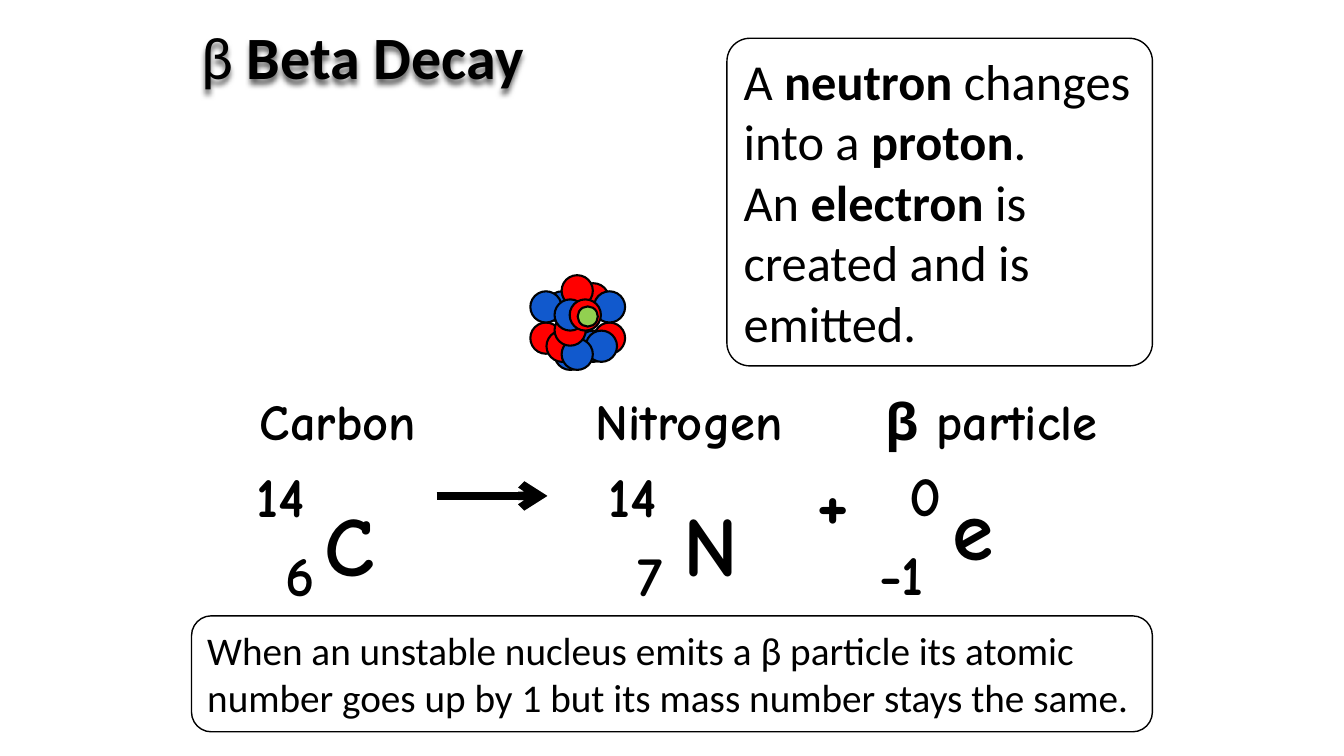
from lxml.etree import SubElement
from pptx import Presentation
from pptx.dml.color import RGBColor
from pptx.enum.shapes import MSO_CONNECTOR, MSO_SHAPE
from pptx.enum.text import MSO_ANCHOR, MSO_AUTO_SIZE, PP_ALIGN
from pptx.oxml.ns import qn
from pptx.util import Pt

PX = 9144  # EMU per px, 100 px to the inch
BLACK = RGBColor(0x00, 0x00, 0x00)
WHITE = RGBColor(0xFF, 0xFF, 0xFF)
PROTON_RED = RGBColor(0xFF, 0x00, 0x00)
NEUTRON_BLUE = RGBColor(0x11, 0x59, 0xCD)
ELECTRON_GREEN = RGBColor(0x92, 0xD0, 0x50)

# Content: paragraphs are lists of (text, bold) runs
TITLE = [[("β ", False), ("Beta Decay", True)]]
EXPLANATION = [
    [("A ", False), ("neutron", True), (" changes into a ", False),
     ("proton", True), (".", False)],
    [("An ", False), ("electron", True),
     (" is created and is emitted.", False)],
]
SUMMARY = [[("When an unstable nucleus emits a β particle its atomic number "
             "goes up by 1 but its mass number stays the same.", False)]]

# Equation labels: text, size in points, left, top, width
EQUATION = [
    ("C", 60, 312, 484, 72), ("14", 40, 245, 453, 89),
    ("6", 40, 273, 531, 54), ("Carbon", 36, 248, 382, 187),
    ("N", 60, 668, 484, 89), ("14", 40, 594, 453, 89),
    ("7", 40, 622, 531, 54), ("Nitrogen", 36, 581, 382, 231),
    ("e", 60, 935, 468, 67), ("0", 40, 892, 452, 54),
    ("-1", 40, 862, 530, 89), ("β particle", 36, 868, 382, 255),
    ("+", 54, 800, 445, 66),
]
LABEL_HEIGHTS = {36: 71, 40: 77, 54: 101, 60: 111}

# Nucleons from back to front: column and row on a fine grid, colour
NUCLEONS = [
    (6, 1, PROTON_RED), (0, 6, PROTON_RED), (3, 8, NEUTRON_BLUE),
    (2, 2, NEUTRON_BLUE), (2, 7, PROTON_RED), (6, 7, NEUTRON_BLUE),
    (8, 6, PROTON_RED), (0, 2, NEUTRON_BLUE), (7, 7, NEUTRON_BLUE),
    (4, 8, NEUTRON_BLUE), (4, 0, PROTON_RED), (8, 2, NEUTRON_BLUE),
    (3, 5, PROTON_RED), (3, 3, NEUTRON_BLUE), (5, 3, PROTON_RED),
]
NUCLEUS_LEFT, NUCLEUS_TOP, GRID_STEP = 526, 273, 7.87
NUCLEON_SIZE, ELECTRON_SIZE = 31, 20


def scaled(*lengths):
    return [round(length) * PX for length in lengths]


def write_text(shape, paragraphs, size, font="Calibri", wrap=True,
               anchor=MSO_ANCHOR.TOP, auto_size=MSO_AUTO_SIZE.NONE):
    frame = shape.text_frame
    frame.word_wrap = wrap
    frame.auto_size = auto_size
    frame.vertical_anchor = anchor
    for index, runs in enumerate(paragraphs):
        paragraph = frame.add_paragraph() if index else frame.paragraphs[0]
        paragraph.alignment = PP_ALIGN.LEFT
        for text, bold in runs:
            run = paragraph.add_run()
            run.text = text
            run.font.name = font
            run.font.size = Pt(size)
            run.font.bold = bold
            run.font.color.rgb = BLACK


def add_outlined(slide, kind, box, fill, line_width):
    shape = slide.shapes.add_shape(kind, *scaled(*box))
    shape.shadow.inherit = False
    shape.fill.solid()
    shape.fill.fore_color.rgb = fill
    shape.line.color.rgb = BLACK
    shape.line.width = Pt(line_width)
    return shape


def add_panel(slide, box, paragraphs, size, corner):
    panel = add_outlined(slide, MSO_SHAPE.ROUNDED_RECTANGLE, box, WHITE, 1)
    panel.adjustments[0] = corner
    write_text(panel, paragraphs, size,
               auto_size=MSO_AUTO_SIZE.SHAPE_TO_FIT_TEXT)


def add_title(slide):
    title = slide.shapes.add_textbox(*scaled(190, 16, 953, 78))
    write_text(title, TITLE, 42.9, anchor=MSO_ANCHOR.MIDDLE)
    # Soft shadow below the letters
    effects = SubElement(title._element.spPr, qn("a:effectLst"))
    shadow = SubElement(effects, qn("a:outerShdw"), blurRad="50800",
                        dist="38100", dir="5400000", rotWithShape="0")
    color = SubElement(shadow, qn("a:srgbClr"), val=str(BLACK))
    SubElement(color, qn("a:alpha"), val="60000")


def add_equation(slide):
    for text, size, left, top, width in EQUATION:
        box = scaled(left, top, width, LABEL_HEIGHTS[size])
        label = slide.shapes.add_textbox(*box)
        write_text(label, [[(text, True)]], size, font="Comic Neue",
                   wrap=False, auto_size=MSO_AUTO_SIZE.SHAPE_TO_FIT_TEXT)
    arrow = slide.shapes.add_connector(MSO_CONNECTOR.STRAIGHT,
                                       *scaled(433, 492, 543, 492))
    arrow.line.color.rgb = BLACK
    arrow.line.width = Pt(6)
    SubElement(arrow.line._get_or_add_ln(), qn("a:tailEnd"), type="arrow")
    SubElement(arrow._element.spPr, qn("a:effectLst"))


def add_nucleus(slide):
    particles = [(column, row, NUCLEON_SIZE, color)
                 for column, row, color in NUCLEONS]
    particles.append((6, 4, ELECTRON_SIZE, ELECTRON_GREEN))
    for column, row, size, color in particles:
        box = (NUCLEUS_LEFT + column * GRID_STEP,
               NUCLEUS_TOP + row * GRID_STEP, size, size)
        add_outlined(slide, MSO_SHAPE.OVAL, box, color, 1.5)


def main():
    presentation = Presentation()
    presentation.slide_width, presentation.slide_height = scaled(1333, 750)
    slide = presentation.slides.add_slide(presentation.slide_layouts[6])
    add_title(slide)
    add_equation(slide)
    add_panel(slide, (721, 38, 422, 325), EXPLANATION, 36, 0.07)
    add_nucleus(slide)
    add_panel(slide, (190, 611, 953, 115), SUMMARY, 28, 0.17)
    presentation.save("out.pptx")


if __name__ == "__main__":
    main()
